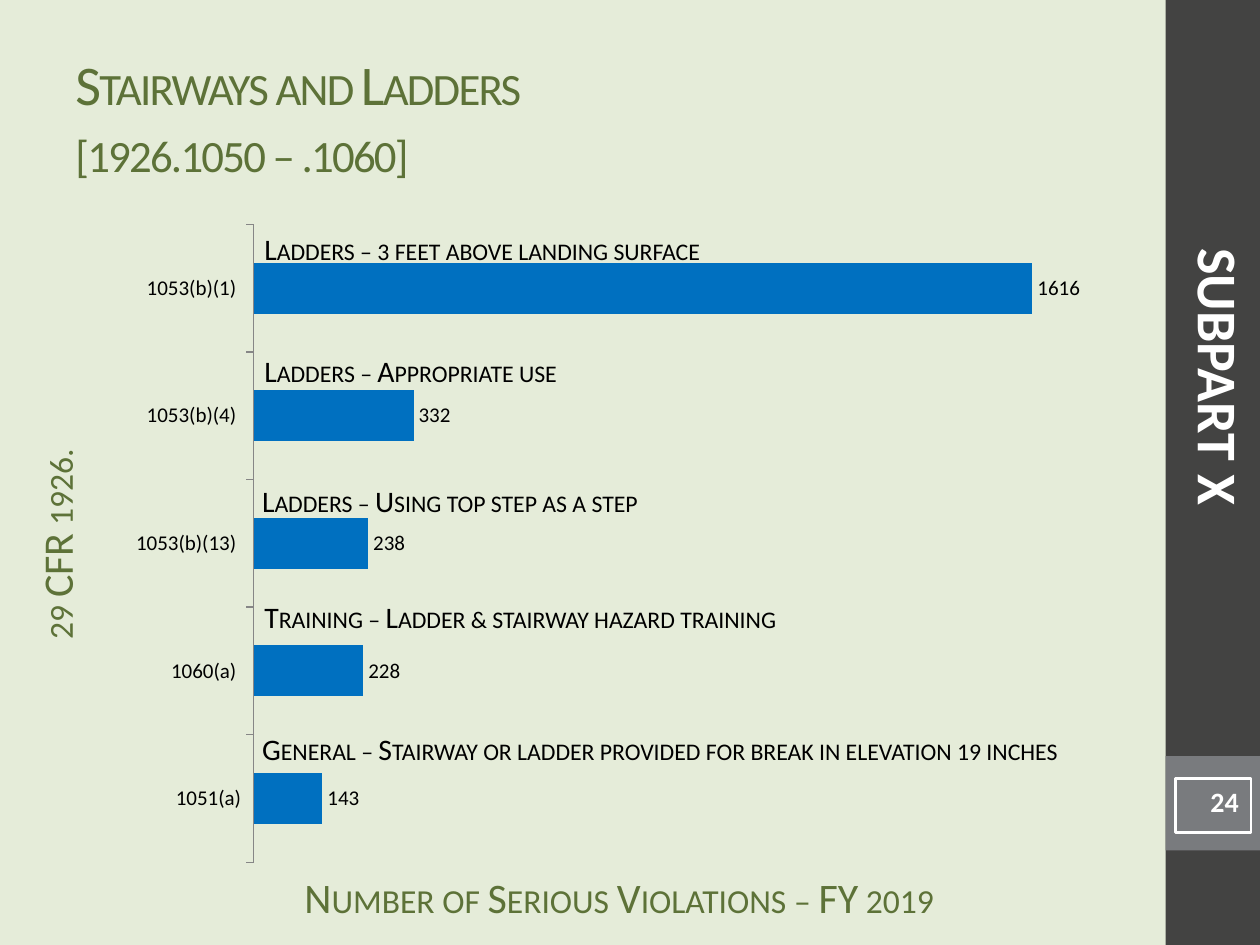
from dataclasses import dataclass

import pptx
import pptx.chart.data
import pptx.dml.color
import pptx.enum.chart
import pptx.enum.shapes
import pptx.enum.text
import pptx.oxml
import pptx.util

Inches = pptx.util.Inches
Pt = pptx.util.Pt
RGBColor = pptx.dml.color.RGBColor
Align = pptx.enum.text.PP_ALIGN
Anchor = pptx.enum.text.MSO_ANCHOR

FONT = "Calibri"
PALE_GREEN = RGBColor(0xE5, 0xEC, 0xD9)
GREEN = RGBColor(0x5D, 0x72, 0x38)
CHARCOAL = RGBColor(0x43, 0x43, 0x42)
GRAY = RGBColor(0x79, 0x7B, 0x7E)
BLUE = RGBColor(0x00, 0x70, 0xC0)
AXIS_GRAY = RGBColor(0x86, 0x86, 0x86)
BLACK = RGBColor(0, 0, 0)
WHITE = RGBColor(0xFF, 0xFF, 0xFF)

CATEGORIES = ["1051(a)", "1060(a) ", "1053(b)(13) ", "1053(b)(4) ", "1053(b)(1) "]
VIOLATIONS = [143, 228, 238, 332, 1616]


@dataclass
class Label:
    text: str
    left: float
    top: float
    width: float
    height: float
    size: float = 17
    color: RGBColor = BLACK
    small_caps: bool = True
    bold: bool = False
    align: Align = Align.LEFT
    anchor: Anchor = Anchor.TOP
    rotation: float = 0
    insets: tuple = (0.1, 0.05, 0.1, 0.05)
    wrap: bool = True
    spacing: int = 0


AXIS_INSETS = (0.1, 0, 0.1, 0.05)
NO_INSETS = (0, 0, 0, 0)

LABELS = [
    Label("Number of Serious Violations – FY 2019", 2.08, 6.92, 5.67, 0.33,
          size=24, color=GREEN, align=Align.CENTER, insets=AXIS_INSETS),
    Label("29 CFR 1926.", -1.56, 4.03, 4.19, 0.58, size=24, color=GREEN,
          align=Align.CENTER, rotation=270, insets=AXIS_INSETS),
    Label("Stairways and Ladders\v[1926.1050 – .1060]", 0.5, 0.3, 8.33, 1.25,
          size=32, color=GREEN, anchor=Anchor.MIDDLE, spacing=-100),
    Label("Ladders – Using top step as a step", 2.08, 3.83, 3.84, 0.26,
          insets=NO_INSETS),
    Label("General – Stairway or ladder provided for break in elevation 19 inches",
          2.08, 5.8, 6.59, 0.29, insets=NO_INSETS),
    Label("Ladders – 3 feet above landing surface", 2, 1.78, 3.86, 0.39, wrap=False),
    Label("Ladders – Appropriate use", 2, 2.75, 2.61, 0.39, wrap=False),
    Label("Training – Ladder & stairway hazard training", 2, 4.7, 4.46, 0.39,
          wrap=False),
    Label("SUBPART X", 6.69, 2.67, 5.98, 0.64, size=32, color=WHITE,
          small_caps=False, bold=True, align=Align.CENTER, rotation=90),
]


def write_text(shape, label: Label) -> None:
    frame = shape.text_frame
    frame.text = label.text
    frame.word_wrap = label.wrap
    frame.vertical_anchor = label.anchor
    (frame.margin_left, frame.margin_top,
     frame.margin_right, frame.margin_bottom) = map(Inches, label.insets)
    paragraph = frame.paragraphs[0]
    paragraph.alignment = label.align
    for span in paragraph.runs:
        span.font.name = FONT
        span.font.size = Pt(label.size)
        span.font.bold = label.bold
        span.font.color.rgb = label.color
        properties = span.font._element
        if label.small_caps:
            properties.set("cap", "small")
        if label.spacing:
            properties.set("spc", str(label.spacing))


def add_label(page, label: Label) -> None:
    box = page.shapes.add_textbox(*map(Inches, (label.left, label.top,
                                                label.width, label.height)))
    box.rotation = label.rotation
    write_text(box, label)


def add_rectangle(page, left: float, top: float, width: float, height: float):
    rectangle = page.shapes.add_shape(
        pptx.enum.shapes.MSO_SHAPE.RECTANGLE,
        *map(Inches, (left, top, width, height)))
    rectangle.shadow.inherit = False
    rectangle.fill.background()
    rectangle.line.fill.background()
    return rectangle


def add_panel(page, top: float, height: float, color: RGBColor) -> None:
    panel = add_rectangle(page, 9.25, top, 0.75, height)
    panel.fill.solid()
    panel.fill.fore_color.rgb = color


def add_page_number(page) -> None:
    label = Label("24", 9.33, 6.18, 0.6, 0.43, size=16, color=WHITE,
                  small_caps=False, bold=True, align=Align.RIGHT)
    box = add_rectangle(page, label.left, label.top, label.width, label.height)
    box.line.color.rgb = WHITE
    box.line.width = Pt(1.5)
    write_text(box, label)


def set_font(font, size: float) -> None:
    font.name = FONT
    font.size = Pt(size)
    font.color.rgb = BLACK


def add_violations_chart(page) -> None:
    data = pptx.chart.data.CategoryChartData()
    data.categories = CATEGORIES
    data.add_series("Series 1", VIOLATIONS)
    chart = page.shapes.add_chart(
        pptx.enum.chart.XL_CHART_TYPE.BAR_CLUSTERED,
        Inches(0.92), Inches(1.67), Inches(8.15), Inches(5.28), data).chart
    chart.has_legend = False
    chart.has_title = False
    set_font(chart.font, 10)

    axis = chart.category_axis
    axis.major_tick_mark = pptx.enum.chart.XL_TICK_MARK.OUTSIDE
    axis.format.line.color.rgb = AXIS_GRAY
    set_font(axis.tick_labels.font, 12)
    chart.value_axis.has_major_gridlines = False
    chart.value_axis.minimum_scale = 0
    chart.value_axis.maximum_scale = 1800
    chart.value_axis.visible = False

    plot = chart.plots[0]
    plot.gap_width = 150
    plot.vary_by_categories = False
    series = plot.series[0]
    series.format.fill.solid()
    series.format.fill.fore_color.rgb = BLUE
    labels = series.data_labels
    labels.show_value = True
    labels.position = pptx.enum.chart.XL_LABEL_POSITION.OUTSIDE_END
    set_font(labels.font, 12)

    plot_area = chart._chartSpace.chart.plotArea
    for old_layout in plot_area.xpath("c:layout"):
        plot_area.remove(old_layout)
    plot_area.insert(0, pptx.oxml.parse_xml(
        '<c:layout xmlns:c="http://schemas.openxmlformats.org/drawingml/2006/chart">'
        '<c:manualLayout><c:layoutTarget val="inner"/>'
        '<c:xMode val="edge"/><c:yMode val="edge"/>'
        '<c:x val="0.134"/><c:y val="0.021"/><c:w val="0.845"/><c:h val="0.959"/>'
        '</c:manualLayout></c:layout>'))


def main() -> None:
    deck = pptx.Presentation()
    deck.slide_width = Inches(10)
    deck.slide_height = Inches(7.5)
    page = deck.slides.add_slide(deck.slide_layouts[6])
    page.background.fill.solid()
    page.background.fill.fore_color.rgb = PALE_GREEN
    add_panel(page, 0, 7.5, CHARCOAL)
    add_panel(page, 6, 0.75, GRAY)
    add_violations_chart(page)
    add_page_number(page)
    for label in LABELS:
        add_label(page, label)
    deck.save("out.pptx")


if __name__ == "__main__":
    main()
